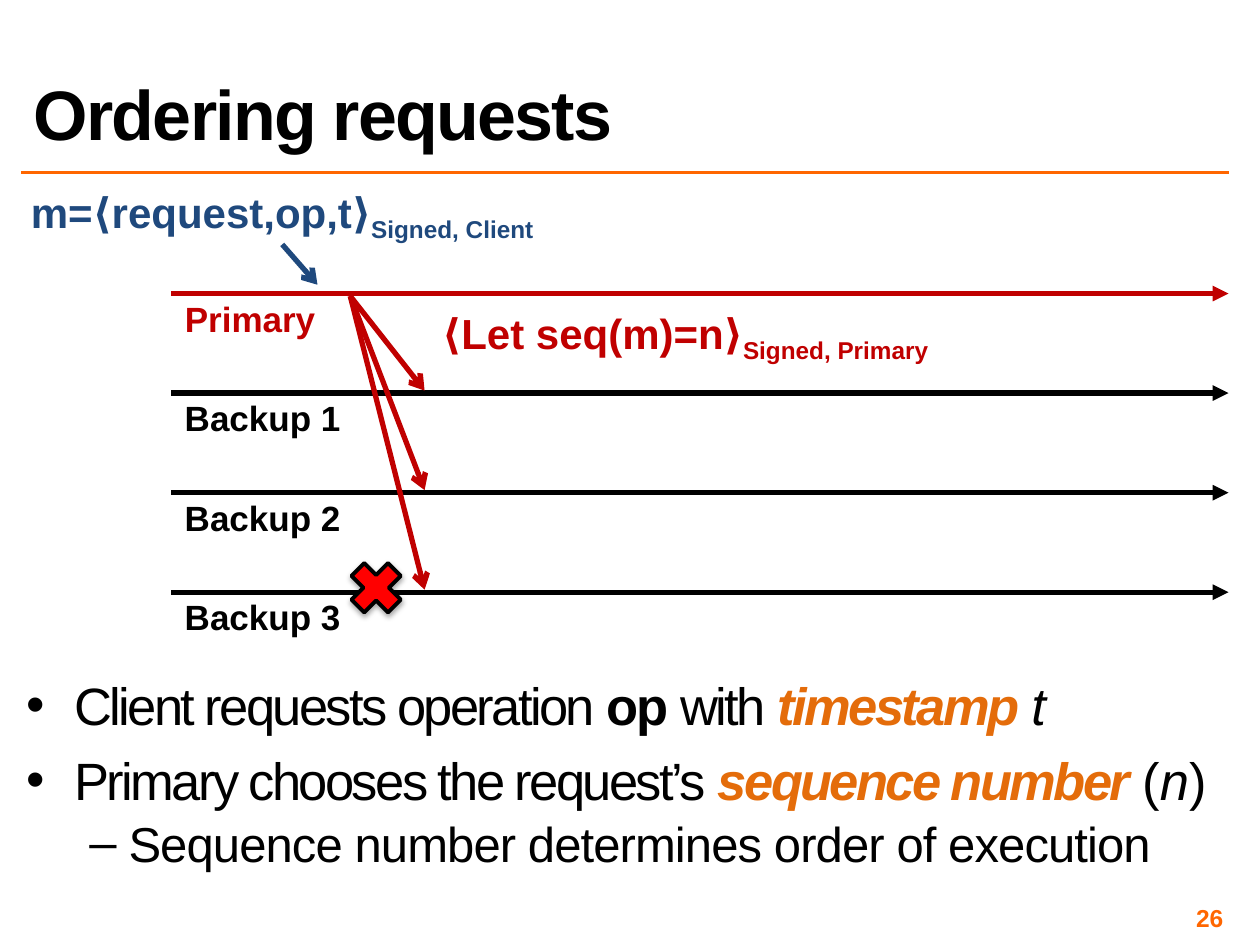
from dataclasses import dataclass

from pptx import Presentation
from pptx import util as u
from pptx.dml.color import RGBColor
from pptx.enum import shapes, text
from pptx.oxml import ns, xmlchemy


@dataclass(frozen=True)
class Theme:
    font: str = "Arial"
    black: str = "000000"
    accent: str = "FF6600"
    emphasis: str = "E46C0A"
    primary: str = "C00000"
    client: str = "1F497D"
    fault: str = "FF0000"
    title: int = 40
    body: int = 30
    sub: int = 28
    message: int = 24
    label: int = 20
    number: int = 14


T = Theme()
ALIGN = text.PP_ALIGN
ANCHOR = text.MSO_ANCHOR


def add_run(p, words, size, color=T.black, bold=False, italic=False, spacing=None, baseline=None):
    r = p.add_run()
    r.text = words
    f = r.font
    f.name, f.size, f.bold, f.italic = T.font, u.Pt(size), bold, italic
    f.color.rgb = RGBColor.from_string(color)
    rPr = r._r.get_or_add_rPr()
    if spacing is not None:
        rPr.set("spc", str(int(spacing * 100)))
    if baseline is not None:
        rPr.set("baseline", str(baseline * 1000))


def add_child(parent, tag, **attrs):
    el = xmlchemy.OxmlElement(tag)
    for key, value in attrs.items():
        el.set(key, str(value))
    parent.append(el)
    return el


class Sketch:
    """Draws styled elements on the current slide."""

    def __init__(self, s):
        self.s = s

    def box(self, x, y, w, h, inset=None, anchor=ANCHOR.TOP, wrap=True):
        sp = self.s.shapes.add_textbox(*map(u.Inches, (x, y, w, h)))
        tf = sp.text_frame
        tf.word_wrap, tf.vertical_anchor = wrap, anchor
        if not wrap:
            tf.auto_size = text.MSO_AUTO_SIZE.SHAPE_TO_FIT_TEXT
        if inset is not None:
            tf.margin_left = tf.margin_right = u.Inches(inset)
            tf.margin_top = tf.margin_bottom = u.Inches(inset)
        return tf

    def line(self, x1, y1, x2, y2, color, width=3, tail=None):
        c = self.s.shapes.add_connector(
            shapes.MSO_CONNECTOR.STRAIGHT, *map(u.Inches, (x1, y1, x2, y2)))
        c.line.color.rgb = RGBColor.from_string(color)
        c.line.width = u.Pt(width)
        spPr = c._element.spPr
        if tail:
            add_child(spPr.get_or_add_ln(), "a:tailEnd", type=tail)
        add_child(spPr, "a:effectLst")

    def label(self, x, y, w, words, color):
        p = self.box(x, y, w, 0.44, wrap=False).paragraphs[0]
        p.alignment = ALIGN.CENTER
        add_run(p, words, T.label, color, bold=True)

    def message(self, x, y, w, words, signer, color):
        p = self.box(x, y, w, 0.5, wrap=False).paragraphs[0]
        p.alignment = ALIGN.CENTER
        add_run(p, words, T.message, color, bold=True)
        add_run(p, signer, T.message, color, bold=True, baseline=-25)

    def bullet(self, p, char, indent, hang, before, size, spacing, parts, level=0):
        p.level, p.line_spacing, p.space_before = level, 0.8, u.Pt(before)
        pPr = p._p.get_or_add_pPr()
        pPr.set("marL", str(u.Inches(indent)))
        pPr.set("indent", str(-u.Inches(hang)))
        add_child(pPr, "a:buFont", typeface=T.font)
        add_child(pPr, "a:buChar", char=char)
        for words, style in parts:
            add_run(p, words, size, spacing=spacing, **style)

    def cross(self, x, y, size):
        sp = self.s.shapes.add_shape(
            shapes.MSO_SHAPE.CROSS, *map(u.Inches, (x, y, size, size)))
        sp.rotation = 45
        sp.adjustments[0] = 0.325
        sp.fill.solid()
        sp.fill.fore_color.rgb = RGBColor.from_string(T.fault)
        sp.line.color.rgb = RGBColor.from_string(T.black)
        sp.line.width = u.Pt(2.25)
        sp.shadow.inherit = False
        effects = sp._element.spPr.find(ns.qn("a:effectLst"))
        shadow = add_child(effects, "a:outerShdw", blurRad=u.Pt(3.1), dist=u.Pt(1.8),
                           dir=90 * 60000, rotWithShape=0)
        add_child(add_child(shadow, "a:srgbClr", val=T.black), "a:alpha", val=35000)


def main():
    prs = Presentation()
    prs.slide_width, prs.slide_height = u.Inches(10), u.Inches(7.5)
    sk = Sketch(prs.slides.add_slide(prs.slide_layouts[6]))
    left, right = 0.17, 9.75

    sk.line(left, 1.37, right, 1.37, T.accent, width=2)
    p = sk.box(left, 0.1, right - left, 1.17, anchor=ANCHOR.BOTTOM).paragraphs[0]
    p.line_spacing = 0.8
    add_run(p, "Ordering requests", T.title, bold=True, spacing=-1)

    strong = dict(color=T.emphasis, bold=True, italic=True)
    tf = sk.box(left, 5.4, right - left, 1.67, inset=0.04)
    sk.bullet(tf.paragraphs[0], "•", 0.38, 0.38, 14, T.body, -1.5, [
        ("Client requests operation ", {}), ("op", dict(bold=True)), (" with ", {}),
        ("timestamp ", strong), ("t", dict(italic=True))])
    sk.bullet(tf.add_paragraph(), "•", 0.38, 0.38, 14, T.body, -1.5, [
        ("Primary chooses the request’s ", {}), ("sequence number ", strong),
        ("(", {}), ("n", dict(italic=True)), (")", {})])
    sk.bullet(tf.add_paragraph(), "–", 0.81, 0.31, 8, T.sub, -0.5, [
        ("Sequence number determines order of execution", {})], level=1)

    p = sk.box(7.42, 7.17, 2.33, 0.23, inset=0.04, anchor=ANCHOR.MIDDLE).paragraphs[0]
    p.alignment = ALIGN.RIGHT
    add_run(p, "26", T.number, T.accent, bold=True)

    lane_x, lane_top, lane_gap = 1.36, 2.33, 0.79
    lanes = [("Primary", 1.25, T.primary)]
    lanes += [(f"Backup {i}", 1.45, T.black) for i in (1, 2, 3)]
    lane_ys = [lane_top + i * lane_gap for i in range(len(lanes))]
    for y, (name, width, color) in zip(lane_ys, lanes):
        sk.line(lane_x, y, right, y, color, tail="triangle")
        sk.label(lane_x, y - 0.02, width, name, color)

    sk.message(0.06, 1.43, 4.36, "m=⟨request,op,t⟩", "Signed, Client", T.client)
    sk.line(2.24, 1.94, 2.52, 2.26, T.client, tail="arrow")

    sk.cross(2.78, 4.46, 0.41)
    for y in lane_ys[1:]:
        sk.line(2.78, 2.35, 3.37, y - 0.02, T.primary, tail="arrow")
    sk.message(3.31, 2.39, 4.26, "⟨Let seq(m)=n⟩", "Signed, Primary", T.primary)

    prs.save("out.pptx")


if __name__ == "__main__":
    main()
